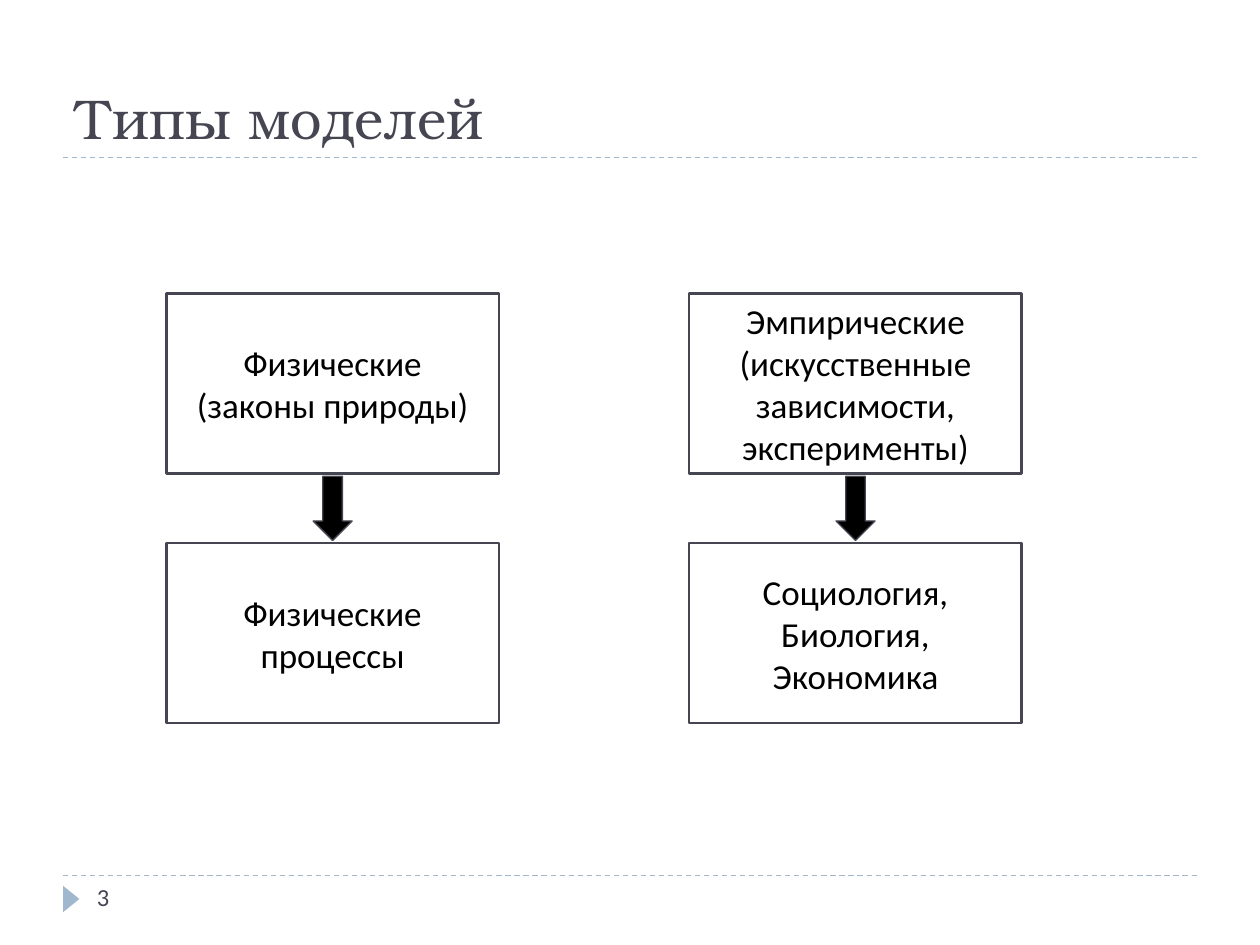
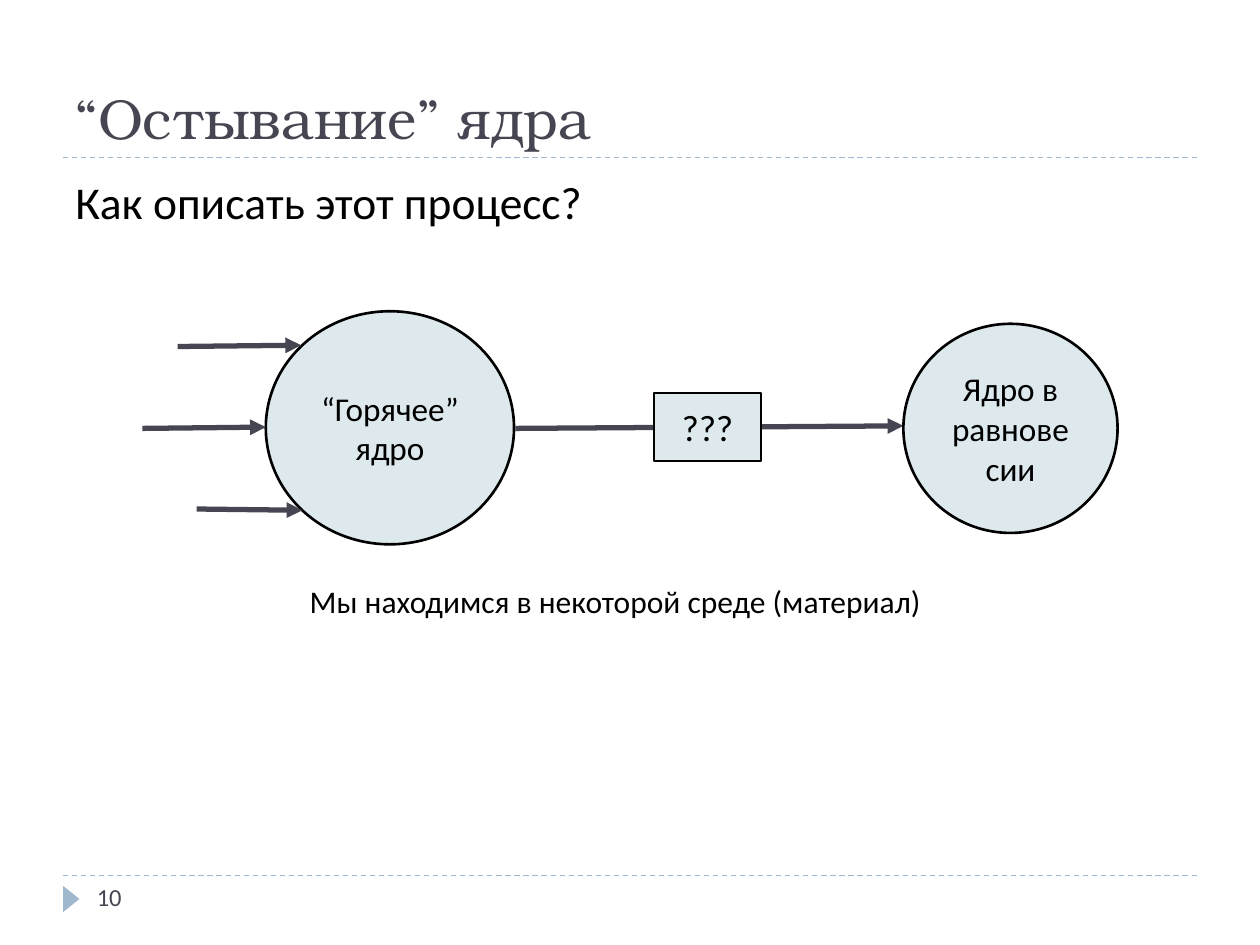
from lxml.etree import SubElement
from pptx import Presentation
from pptx.dml.color import RGBColor
from pptx.enum.dml import MSO_LINE
from pptx.enum.shapes import MSO_CONNECTOR, MSO_SHAPE as SHAPE
from pptx.enum.text import MSO_ANCHOR as ANCHOR, PP_ALIGN as ALIGN
from pptx.oxml.ns import qn
from pptx.util import Inches, Pt

INK, SKY, PALE, BLACK, WHITE = "464653", "9FB8CD", "DDE9EC", "000000", "FFFFFF"
TITLE_FONT, BODY_FONT = "TeX Gyre Bonum", "Calibri"


def color(hex_value):
    """Turn a hex string into a colour."""
    return RGBColor.from_string(hex_value)


class Deck:
    """Holds the presentation, its style and the current slide."""

    def __init__(self):
        """Start an empty 10 by 7.5 inch deck."""
        self.prs = Presentation()
        self.prs.slide_width, self.prs.slide_height = Inches(10), Inches(7.5)
        self.slide = None

    def new_slide(self, title, number):
        """Add a slide with its title, dashed rules and page number."""
        self.slide = self.prs.slides.add_slide(self.prs.slide_layouts[5])
        for y in (6.95, 1.25):
            self.line((0.5, y), (9.5, y), SKY, 0.75, dashed=True)
        self.shape(SHAPE.ISOSCELES_TRIANGLE, (0.46, 7.07, 0.21, 0.13), SKY).rotation = 90
        heading = self.slide.shapes.title
        self.place(heading, (0.5, 0.17, 9, 1.08))
        self.set_text(heading, title, 32, INK, TITLE_FONT, anchor=ANCHOR.BOTTOM)
        self.text((0.67, 6.95, 2.17, 0.4), str(number), 14, INK)

    def place(self, item, box):
        """Move an item to a box given in inches."""
        item.left, item.top, item.width, item.height = map(Inches, box)

    def set_text(self, item, text, size, ink=BLACK, font=BODY_FONT,
                 align=ALIGN.LEFT, anchor=ANCHOR.TOP, inset=0.05, before=0):
        """Fill an item with one paragraph, a run for each line."""
        frame = item.text_frame
        frame.word_wrap = True
        frame.vertical_anchor = anchor
        frame.margin_left = frame.margin_right = Inches(0.1)
        frame.margin_top = frame.margin_bottom = Inches(inset)
        paragraph = frame.paragraphs[0]
        paragraph.alignment = align
        paragraph.space_before = Pt(before)
        for index, part in enumerate(text.split("\n")):
            if index:
                paragraph.add_line_break()
            run = paragraph.add_run()
            run.text = part
            run.font.size, run.font.name = Pt(size), font
            run.font.color.rgb = color(ink)

    def text(self, box, text, size, ink=BLACK, **style):
        """Add a text box."""
        self.set_text(self.slide.shapes.add_textbox(*map(Inches, box)), text, size, ink, **style)

    def shape(self, kind, box, fill, outline=None, width=1.5, text=None, size=20):
        """Add a filled preset shape with optional outline and centred text."""
        item = self.slide.shapes.add_shape(kind, *map(Inches, box))
        item.shadow.inherit = False
        item.fill.solid()
        item.fill.fore_color.rgb = color(fill)
        if outline:
            item.line.color.rgb = color(outline)
            item.line.width = Pt(width)
        else:
            item.line.fill.background()
        if text:
            self.set_text(item, text, size, align=ALIGN.CENTER, anchor=ANCHOR.MIDDLE, inset=0.1)
        return item

    def line(self, start, end, ink=INK, width=3, dashed=False, arrow=False):
        """Add a straight line, dashed or with an arrowhead at its end."""
        link = self.slide.shapes.add_connector(
            MSO_CONNECTOR.STRAIGHT, *map(Inches, (*start, *end)))
        link.line.color.rgb = color(ink)
        link.line.width = Pt(width)
        if dashed:
            link.line.dash_style = MSO_LINE.DASH
        properties = link.element.spPr
        if arrow:
            SubElement(properties.find(qn("a:ln")), qn("a:tailEnd"), type="triangle")
        SubElement(properties, qn("a:effectLst"))


def model_types(deck):
    """Two kinds of models, each leading to its field of use."""
    deck.new_slide("Типы моделей", 3)
    box_width, box_height, arrow_width, arrow_height = 2.64, 1.43, 0.31, 0.51
    model_top, field_top = 2.33, 4.31
    arrow_top = (model_top + box_height + field_top - arrow_height) / 2
    columns = (
        (1.32, "Физические\n(законы природы)", "Физические процессы"),
        (5.47, "Эмпирические\n(искусственные зависимости, эксперименты)",
         "Социология,\nБиология,\nЭкономика"),
    )
    for left, model, field in columns:
        for top, label in ((model_top, model), (field_top, field)):
            deck.shape(SHAPE.RECTANGLE, (left, top, box_width, box_height), WHITE, INK, text=label)
        arrow_left = left + (box_width - arrow_width) / 2
        deck.shape(SHAPE.DOWN_ARROW, (arrow_left, arrow_top, arrow_width, arrow_height),
                   BLACK, INK, 0.75)


def nucleus_cooling(deck):
    """A hot nucleus reaching equilibrium by an unknown process."""
    deck.new_slide("“Остывание” ядра", 10)
    deck.text((0.5, 1.33, 9, 0.93), "Как описать этот процесс?", 26, before=6)
    deck.shape(SHAPE.OVAL, (2.11, 2.47, 1.97, 1.85), PALE, BLACK,
               text="“Горячее” ядро", size=19)
    incoming = (((1.13, 3.4), (2.11, 3.39)),
                ((1.41, 2.75), (2.39, 2.74)),
                ((1.56, 4.04), (2.4, 4.05)))
    transition = ((4.09, 3.4), (7.17, 3.38))
    for start, end in (*incoming, transition):
        deck.line(start, end, arrow=True)
    deck.text((2.36, 4.52, 5.29, 0.54), "Мы находимся в некоторой среде (материал)", 18, inset=0.1)
    deck.shape(SHAPE.OVAL, (7.17, 2.57, 1.7, 1.66), PALE, BLACK,
               text="Ядро в равновесии", size=19)
    deck.shape(SHAPE.RECTANGLE, (5.19, 3.12, 0.85, 0.54), PALE, BLACK, 0.75, "???", 21)


def main():
    """Build and save the deck."""
    deck = Deck()
    model_types(deck)
    nucleus_cooling(deck)
    deck.prs.save("out.pptx")


if __name__ == "__main__":
    main()
